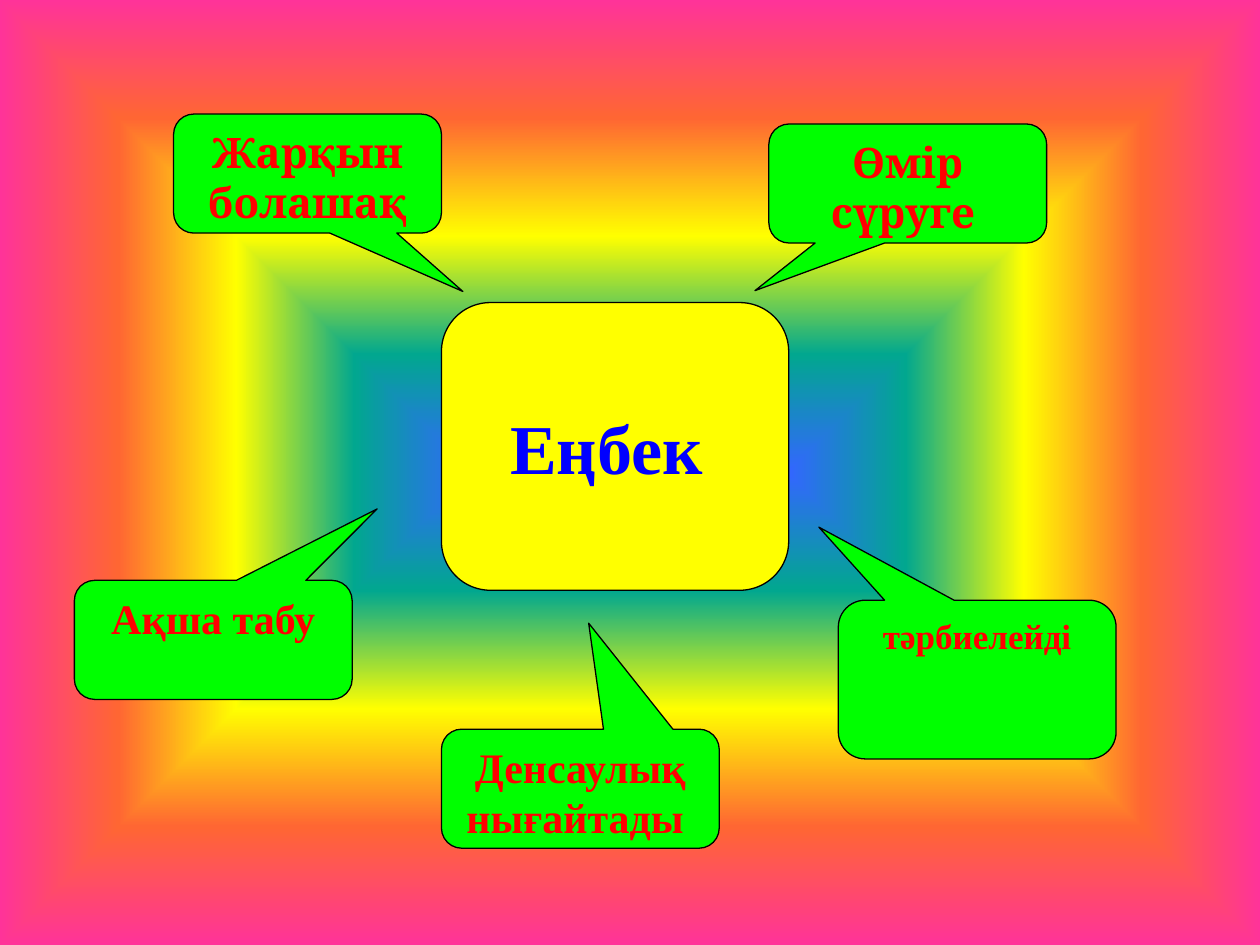
from lxml.etree import SubElement
from pptx import Presentation
from pptx.dml.color import RGBColor
from pptx.enum.shapes import MSO_SHAPE as Preset
from pptx.enum.text import MSO_ANCHOR as Anchor, PP_ALIGN as Align
from pptx.oxml.ns import qn
from pptx.util import Inches, Pt

presentation = Presentation()
presentation.slide_width, presentation.slide_height = Inches(10), Inches(7.5)
CELL = presentation.slide_width / 254  # square grid, 254 columns wide
slide = presentation.slides.add_slide(presentation.slide_layouts[6])


def color(hex_code):
    return RGBColor.from_string(hex_code)


def add_bubble(preset, cells, adjustments, fill, text, font_name, size, text_color):
    """Add a black-outlined shape with bold centred text; cells is left, top, width, height."""
    shape = slide.shapes.add_shape(preset, *(round(n * CELL) for n in cells))
    for index, value in enumerate(adjustments):
        shape.adjustments[index] = value
    shape.shadow.inherit = False
    shape.fill.solid()
    shape.fill.fore_color.rgb = color(fill)
    shape.line.color.rgb = color("000000")
    shape.line.width = Pt(0.75)
    frame = shape.text_frame
    frame.word_wrap = True
    frame.vertical_anchor = Anchor.TOP
    paragraph = frame.paragraphs[0]
    paragraph.text = text
    paragraph.alignment = Align.CENTER
    paragraph.font.name = font_name
    paragraph.font.size = Pt(size)
    paragraph.font.bold = True
    paragraph.font.color.rgb = color(text_color)
    return shape


# Rainbow background, spreading from the centre of the slide
slide.background.fill.gradient()
gradient = slide.element.find(".//" + qn("a:gradFill"))
for child in list(gradient):
    gradient.remove(child)
stops = SubElement(gradient, qn("a:gsLst"))
rainbow = ["3366FF", "01A78F", "FFFF00", "FF6633", "FF3399"]
for index, hex_code in enumerate(rainbow):
    stop = SubElement(stops, qn("a:gs"), pos=str(index * 25000))
    SubElement(stop, qn("a:srgbClr"), val=hex_code)
spread = SubElement(gradient, qn("a:path"), path="shape")
SubElement(spread, qn("a:fillToRect"), l="50000", t="50000", r="50000", b="50000")

# Central idea
center = add_bubble(Preset.ROUNDED_RECTANGLE, (89, 61, 70, 58), [0.17], "FFFF00",
                    "Еңбек ", "Times New Roman", 40, "0000FF")
center.text_frame.vertical_anchor = Anchor.MIDDLE
center.text_frame.word_wrap = False

# Callouts: cells, pointer tip, text, font, size
callouts = [
    ((155, 25, 56, 24), (-0.55, 0.9), "Өмір сүруге ", "Cambria", 24),
    ((35, 23, 54, 24), (0.58, 0.99), "Жарқын болашақ", "Cambria", 24),
    ((169, 121, 56, 32), (-0.57, -0.96), "тәрбиелейді", "Times New Roman", 20),
    ((89, 147, 56, 24), (0.03, -1.39), "Денсаулық нығайтады ", "Times New Roman", 24),
    ((15, 117, 56, 24), (0.59, -1.1), "Ақша табу", "Times New Roman", 24),
]
for cells, tip, text, font_name, size in callouts:
    add_bubble(Preset.ROUNDED_RECTANGULAR_CALLOUT, cells, [*tip, 0.17], "00FF00",
               text, font_name, size, "FF0000")

presentation.save("out.pptx")
